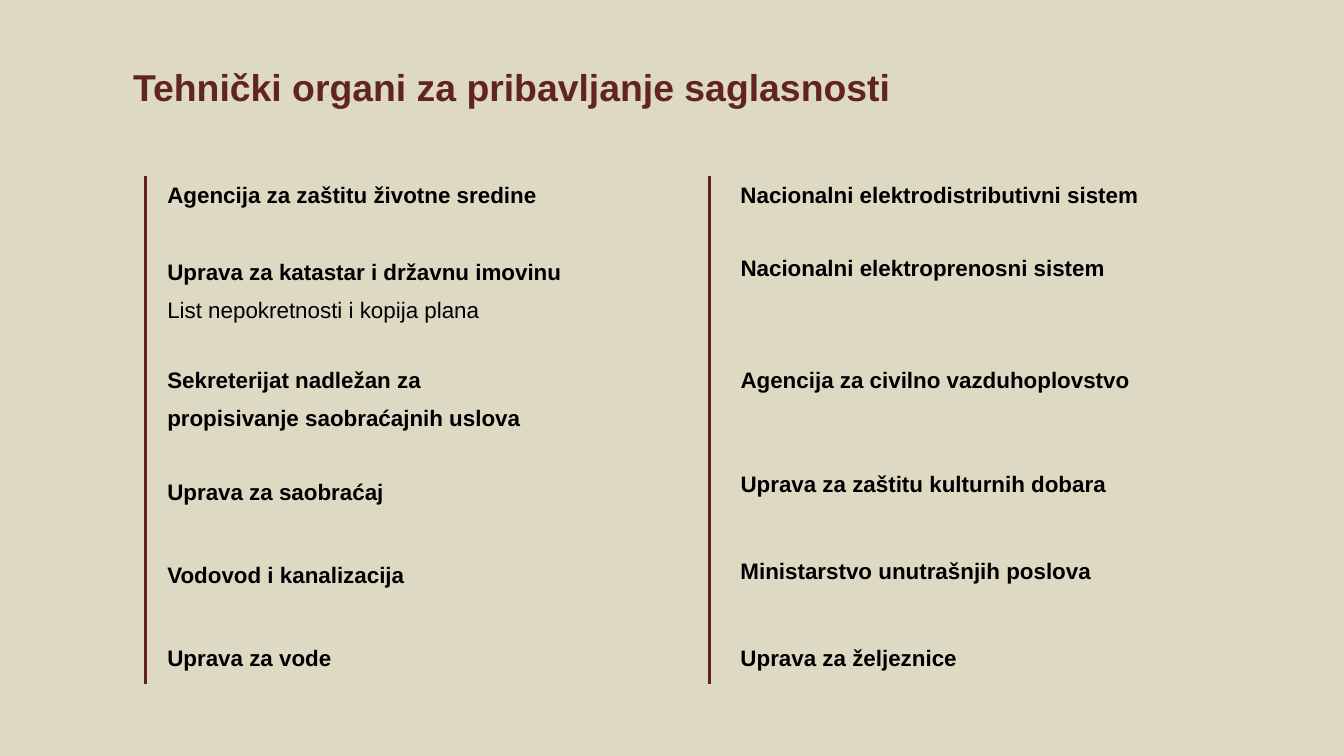
from dataclasses import dataclass

from lxml.etree import SubElement
from pptx import Presentation
from pptx.dml.color import RGBColor
from pptx.enum.shapes import MSO_CONNECTOR
from pptx.enum.text import MSO_ANCHOR, MSO_AUTO_SIZE, PP_ALIGN
from pptx.oxml.ns import qn
from pptx.slide import Slide
from pptx.text.text import TextFrame, _Paragraph
from pptx.util import Inches, Length, Pt


@dataclass(frozen=True)
class Theme:
    """Colours, font and type sizes of the slide."""
    paper: RGBColor = RGBColor(0xDD, 0xD9, 0xC3)
    accent: RGBColor = RGBColor(0x62, 0x24, 0x22)
    ink: RGBColor = RGBColor(0, 0, 0)
    font: str = "Arial"
    title_size: Length = Pt(20)
    body_size: Length = Pt(12)
    rule_width: Length = Pt(1.56)


@dataclass(frozen=True)
class Authority:
    """One authority, placed by grid row and sized in grid columns."""
    name: str
    row: float
    columns: float
    detail: str = ""
    rows: float = 2.3
    inset: float = 0.1
    space_before: float = 1
    line_spacing: float = 1


@dataclass(frozen=True)
class AuthorityList:
    """A vertical rule with the authorities beside it."""
    rule_column: float
    text_column: float
    authorities: tuple[Authority, ...]


THEME = Theme()
COLUMNS = 100
ROWS = COLUMNS * 9 / 16
RULE_TOP, RULE_BOTTOM = 13.1, 50.9
TITLE = "Tehnički organi za pribavljanje saglasnosti"
LISTS = (
    AuthorityList(10.8, 12.35, (
        Authority("Agencija za zaštitu životne sredine", 13.4, 27.9),
        Authority("Uprava za katastar i državnu imovinu", 18.3, 29.6,
                  detail="List nepokretnosti i kopija plana",
                  rows=5.9, inset=0.9, space_before=6.8),
        Authority("Sekreterijat nadležan za propisivanje saobraćajnih uslova",
                  26.35, 26.6, rows=5.9, line_spacing=1.4),
        Authority("Uprava za saobraćaj", 35.45, 16.4),
        Authority("Vodovod i kanalizacija", 41.65, 18.1),
        Authority("Uprava za vode", 47.85, 12.5),
    )),
    AuthorityList(52.8, 55, (
        Authority("Nacionalni elektrodistributivni sistem", 13.4, 30.4),
        Authority("Nacionalni elektroprenosni sistem", 18.85, 27.9),
        Authority("Agencija za civilno vazduhoplovstvo", 27.15, 29.2),
        Authority("Uprava za zaštitu kulturnih dobara", 34.85, 27.5),
        Authority("Ministarstvo unutrašnjih poslova", 41.35, 26.4),
        Authority("Uprava za željeznice", 47.85, 16.4),
    )),
)


def grid(cells: float) -> Length:
    """Convert grid columns or rows to a length."""
    return Inches(cells / 10)


def prepare_frame(frame: TextFrame, left: float, top: float) -> None:
    """Set wrapping, anchoring and insets in grid cells."""
    frame.word_wrap = True
    frame.auto_size = MSO_AUTO_SIZE.NONE
    frame.vertical_anchor = MSO_ANCHOR.TOP
    frame.margin_left, frame.margin_top = grid(left), grid(top)
    frame.margin_right = frame.margin_bottom = 0


def style(paragraph: _Paragraph, size: Length, color: RGBColor,
          before: float, bold: bool = True) -> None:
    """Format a paragraph and its runs."""
    paragraph.alignment = PP_ALIGN.LEFT
    paragraph.space_before = Pt(before)
    for run in paragraph.runs:
        run.font.name, run.font.size, run.font.bold = THEME.font, size, bold
        run.font.color.rgb = color


def draw_title(slide: Slide) -> None:
    """Fill and place the title placeholder."""
    title = slide.shapes.title
    title.left, title.top, title.width, title.height = map(
        grid, (9.2, 1.3, 78.6, 7.8))
    title.text_frame.text = TITLE
    prepare_frame(title.text_frame, 0.7, 3.5)
    style(title.text_frame.paragraphs[0], THEME.title_size, THEME.accent, 1.1)


def draw_rule(slide: Slide, column: float) -> None:
    """Draw the vertical rule of a list."""
    rule = slide.shapes.add_connector(
        MSO_CONNECTOR.STRAIGHT, grid(column), grid(RULE_TOP),
        grid(column), grid(RULE_BOTTOM))
    rule.line.color.rgb = THEME.accent
    rule.line.width = THEME.rule_width
    SubElement(rule._element.spPr, qn("a:effectLst"))


def draw_authority(slide: Slide, column: float, authority: Authority) -> None:
    """Write an authority with its optional detail line."""
    frame = slide.shapes.add_textbox(
        grid(column), grid(authority.row),
        grid(authority.columns), grid(authority.rows)).text_frame
    prepare_frame(frame, 0.1, authority.inset)
    name = frame.paragraphs[0]
    name.text = authority.name
    name.line_spacing = authority.line_spacing
    style(name, THEME.body_size, THEME.ink, authority.space_before)
    if authority.detail:
        detail = frame.add_paragraph()
        detail.text = authority.detail
        style(detail, THEME.body_size, THEME.ink, 5.8, bold=False)


def main() -> None:
    """Build and save the presentation."""
    deck = Presentation()
    deck.slide_width, deck.slide_height = grid(COLUMNS), grid(ROWS)
    slide = deck.slides.add_slide(deck.slide_layouts.get_by_name("Title Only"))
    slide.background.fill.solid()
    slide.background.fill.fore_color.rgb = THEME.paper
    draw_title(slide)
    for authority_list in LISTS:
        draw_rule(slide, authority_list.rule_column)
        for authority in authority_list.authorities:
            draw_authority(slide, authority_list.text_column, authority)
    deck.save("out.pptx")


if __name__ == "__main__":
    main()
